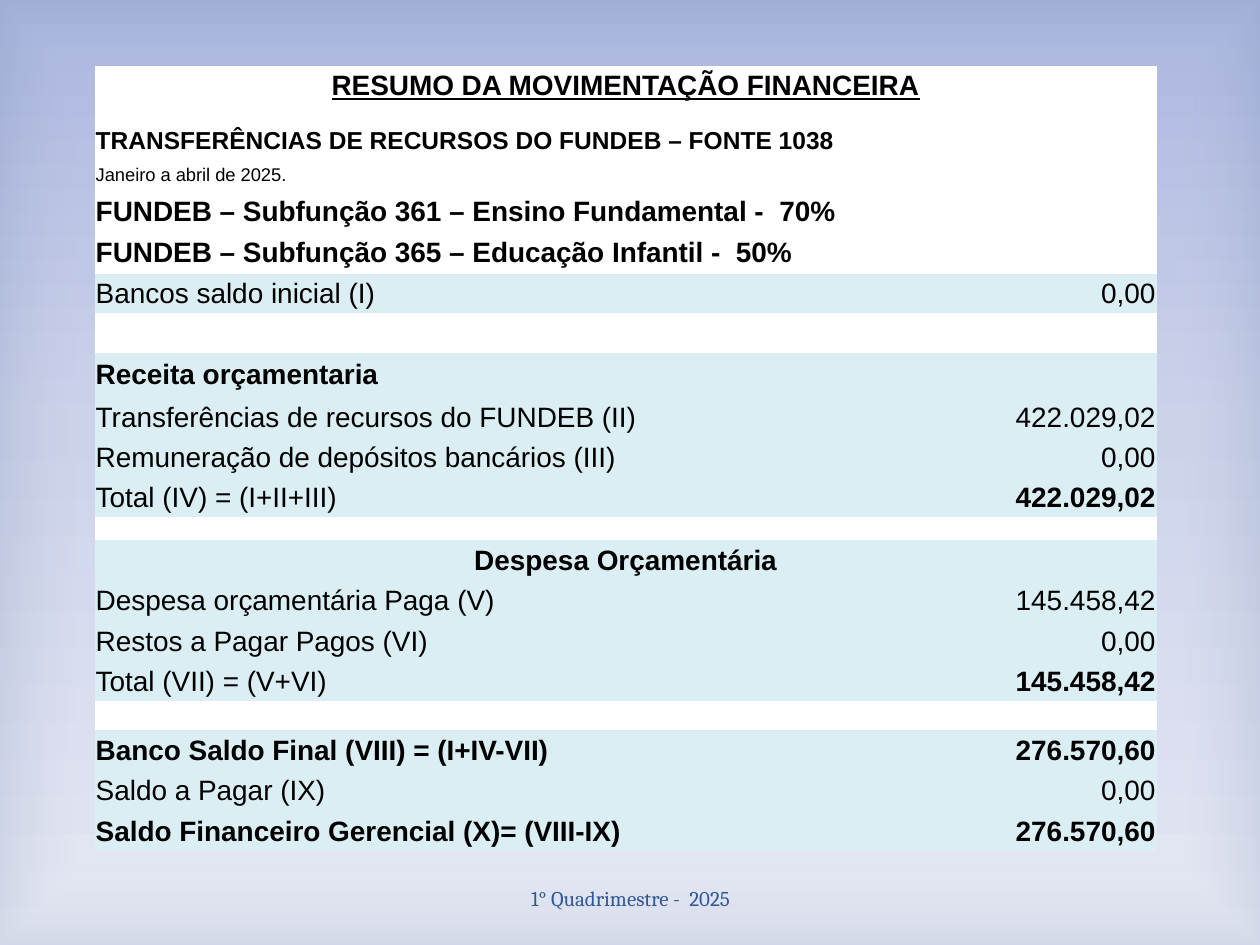
import pptx
import pptx.util
import pptx.dml.color
import pptx.enum.shapes
import pptx.enum.text
import pptx.oxml
import pptx.oxml.ns
import lxml.etree

Inches = pptx.util.Inches
Pt = pptx.util.Pt
qn = pptx.oxml.ns.qn
ALIGN = pptx.enum.text.PP_ALIGN
MIDDLE = pptx.enum.text.MSO_ANCHOR.MIDDLE

COLORS = {
    "white": "FFFFFF",
    "black": "000000",
    "band": "DAEEF3",
    "footer": "2F5897",
    "edge": "9BADC4",
    "sky_top": "A2AEDC",
    "sky_middle": "C6CDE8",
    "sky_bottom": "E3E6F3",
}
PLAIN_STYLE = "{2D5ABB26-0587-4C30-8999-92F81FD0307C}"
COLUMN_WIDTHS = [6.5, 1.93]


def heading(text, height=0.32, size=16, bold=True, underline=False,
            align=ALIGN.LEFT, fill="white"):
    text_format = dict(size=size, bold=bold, underline=underline, align=align)
    return height, fill, [(text, text_format)]


def entry(label, amount, bold_label=False, bold_amount=False):
    return 0.32, "band", [
        (label, dict(bold=bold_label, align=ALIGN.JUSTIFY)),
        (amount, dict(bold=bold_amount, align=ALIGN.RIGHT)),
    ]


def gap(height):
    return height, "white", [("", {})]


OPENING_BALANCE = 6
ROWS = [
    heading("RESUMO DA MOVIMENTAÇÃO FINANCEIRA", underline=True, align=ALIGN.CENTER),
    gap(0.14),
    heading("TRANSFERÊNCIAS DE RECURSOS DO FUNDEB – FONTE 1038", height=0.27, size=14),
    heading("Janeiro a abril de 2025.", height=0.27, size=10.5, bold=False),
    heading("FUNDEB – Subfunção 361 – Ensino Fundamental -  70%"),
    heading("FUNDEB – Subfunção 365 – Educação Infantil -  50%", height=0.33),
    entry("Bancos saldo inicial (I)", "0,00"),
    gap(0.31),
    heading("Receita orçamentaria", height=0.35, fill="band"),
    entry("Transferências de recursos do FUNDEB (II)", "422.029,02"),
    entry("Remuneração de depósitos bancários (III)", "0,00"),
    entry("Total (IV) = (I+II+III)", "422.029,02", bold_amount=True),
    gap(0.18),
    heading("Despesa Orçamentária", align=ALIGN.CENTER, fill="band"),
    entry("Despesa orçamentária Paga (V)", "145.458,42"),
    entry("Restos a Pagar Pagos (VI)", "0,00"),
    entry("Total (VII) = (V+VI)", "145.458,42", bold_amount=True),
    gap(0.23),
    entry("Banco Saldo Final (VIII) = (I+IV-VII)", "276.570,60", True, True),
    entry("Saldo a Pagar (IX)", "0,00"),
    entry("Saldo Financeiro Gerencial (X)= (VIII-IX)", "276.570,60", True, True),
]


def rgb(name):
    return pptx.dml.color.RGBColor.from_string(COLORS[name])


def write_text(frame, text, size=16, font="Arial", color="black", bold=False,
               underline=False, align=ALIGN.LEFT):
    paragraph = frame.paragraphs[0]
    paragraph.alignment = align
    run = paragraph.add_run()
    run.text = text
    run.font.size = Pt(size)
    run.font.name = font
    run.font.bold = bold
    run.font.underline = underline
    run.font.color.rgb = rgb(color)


def set_gradient(fill, element, stops, direction):
    fill.gradient()
    gradient = element.find(".//" + qn("a:gradFill"))
    stop_xml = "".join(
        f'<a:gs pos="{position * 1000}"><a:srgbClr val="{COLORS[color]}">'
        f'<a:alpha val="{opacity * 1000}"/></a:srgbClr></a:gs>'
        for position, color, opacity in stops
    )
    replacement = pptx.oxml.parse_xml(
        f'<a:gradFill {pptx.oxml.ns.nsdecls("a")} rotWithShape="1">'
        f"<a:gsLst>{stop_xml}</a:gsLst>{direction}</a:gradFill>"
    )
    gradient.getparent().replace(gradient, replacement)


def add_background(slide):
    set_gradient(
        slide.background.fill, slide.element,
        [(0, "sky_top", 100), (45, "sky_middle", 100), (100, "sky_bottom", 100)],
        '<a:lin ang="5400000" scaled="0"/>',
    )
    vignette = slide.shapes.add_shape(
        pptx.enum.shapes.MSO_SHAPE.RECTANGLE, 0, 0, Inches(10), Inches(7.5))
    vignette.shadow.inherit = False
    vignette.line.fill.background()
    set_gradient(
        vignette.fill, vignette.element,
        [(83, "white", 11), (100, "edge", 23)],
        '<a:path path="rect"><a:fillToRect l="50000" t="50000" r="50000" b="50000"/></a:path>',
    )


def add_border(cell, side):
    border = pptx.oxml.parse_xml(
        f'<a:{side} {pptx.oxml.ns.nsdecls("a")} w="12700"><a:solidFill>'
        f'<a:srgbClr val="{COLORS["white"]}"/></a:solidFill></a:{side}>'
    )
    cell._tc.get_or_add_tcPr().insert(0, border)


def format_cell(cell, fill):
    cell.fill.solid()
    cell.fill.fore_color.rgb = rgb(fill)
    cell.vertical_anchor = MIDDLE
    cell.margin_left = cell.margin_right = cell.margin_top = Inches(0.01)
    cell.margin_bottom = 0


def shrink_empty_cell(cell):
    paragraph = cell.text_frame.paragraphs[0]._p
    lxml.etree.SubElement(paragraph, qn("a:endParaRPr"), sz="700")


def add_summary_table(slide):
    frame = slide.shapes.add_table(
        len(ROWS), len(COLUMN_WIDTHS), Inches(0.75), Inches(0.52),
        Inches(sum(COLUMN_WIDTHS)), Inches(sum(row[0] for row in ROWS)))
    table = frame.table
    table.first_row = False
    table.horz_banding = False
    table._tbl.find(".//" + qn("a:tableStyleId")).text = PLAIN_STYLE
    for column, width in zip(table.columns, COLUMN_WIDTHS):
        column.width = Inches(width)

    for index, (height, fill, contents) in enumerate(ROWS):
        table.rows[index].height = Inches(height)
        cells = [table.cell(index, column) for column in range(len(COLUMN_WIDTHS))]
        for cell in cells:
            format_cell(cell, fill)
        if len(contents) == 1:
            cells[0].merge(cells[1])
        for cell, (text, text_format) in zip(cells, contents):
            if text:
                write_text(cell.text_frame, text, **text_format)
        for cell in cells:
            if not cell.text_frame.text:
                shrink_empty_cell(cell)

    for column in range(len(COLUMN_WIDTHS)):
        add_border(table.cell(OPENING_BALANCE - 1, column), "lnB")
        add_border(table.cell(OPENING_BALANCE, column), "lnT")


def add_footer(slide):
    box = slide.shapes.add_textbox(Inches(3.42), Inches(6.93), Inches(3.17), Inches(0.4))
    box.text_frame.word_wrap = True
    box.text_frame.vertical_anchor = MIDDLE
    write_text(box.text_frame, "1° Quadrimestre -  2025", size=12, font="Cambria",
               color="footer", align=ALIGN.CENTER)


def main():
    presentation = pptx.Presentation()
    presentation.slide_width = Inches(10)
    presentation.slide_height = Inches(7.5)
    slide = presentation.slides.add_slide(presentation.slide_layouts[6])
    add_background(slide)
    add_footer(slide)
    add_summary_table(slide)
    presentation.save("out.pptx")


if __name__ == "__main__":
    main()
